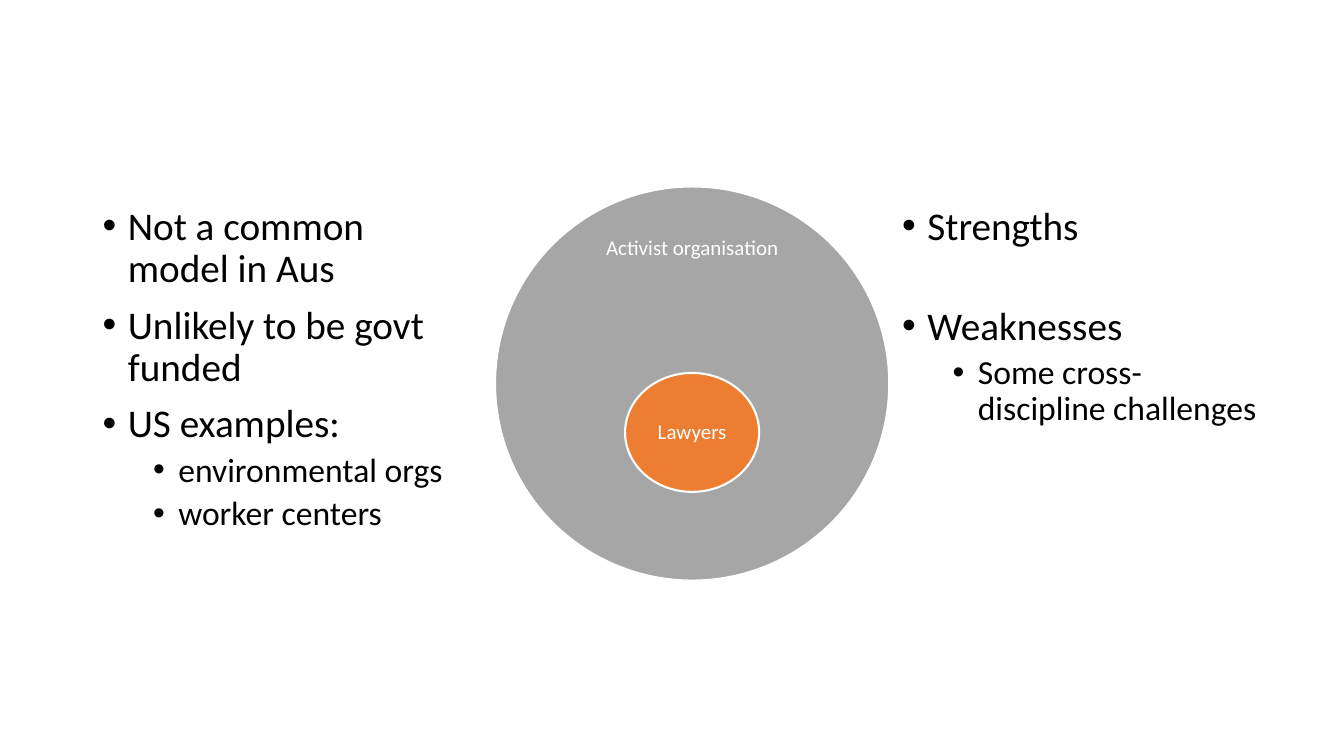
from lxml.etree import SubElement
from pptx import Presentation
from pptx.dml.color import RGBColor
from pptx.enum.shapes import MSO_SHAPE as SHAPE
from pptx.enum.text import MSO_ANCHOR as ANCHOR, PP_ALIGN as ALIGN
from pptx.oxml.ns import qn
from pptx.util import Inches, Pt

COLORS = {"text": "000000", "white": "FFFFFF", "activist": "A6A6A6", "lawyers": "ED7D31"}
FONT = "Calibri"
LEVELS = [
    {"size": 28, "margin": 0.25, "before": 10},
    {"size": 24, "margin": 0.75, "before": 5},
]
MODEL_POINTS = [
    (0, "Not a common model in Aus"),
    (0, "Unlikely to be govt funded"),
    (0, "US examples:"),
    (1, "environmental orgs"),
    (1, "worker centers"),
]
ASSESSMENT_POINTS = [
    (0, "Strengths"),
    (0, "Weaknesses", 41),
    (1, "Some cross-discipline challenges"),
]


def rgb(name):
    return RGBColor.from_string(COLORS[name])


def set_attrs(target, values):
    for name, value in values.items():
        setattr(target, name, value)


def add_run(p, text, size, color):
    r = p.add_run()
    r.text = text
    set_attrs(r.font, {"name": FONT, "size": Pt(size)})
    r.font.color.rgb = rgb(color)


def add_bullet(p, margin):
    pPr = p._p.get_or_add_pPr()
    pPr.set("marL", str(Inches(margin)))
    pPr.set("indent", str(Inches(-0.25)))
    SubElement(pPr, qn("a:buFont")).set("typeface", "Arial")
    SubElement(pPr, qn("a:buChar")).set("char", "•")


def add_bullet_list(slide, box, points):
    tf = slide.shapes.add_textbox(*map(Inches, box)).text_frame
    tf.word_wrap = True
    for i, (level, text, *gap) in enumerate(points):
        style = LEVELS[level]
        before = gap[0] if gap else style["before"]
        p = tf.paragraphs[0] if i == 0 else tf.add_paragraph()
        set_attrs(p, {"level": level, "line_spacing": 0.9, "space_before": Pt(before)})
        add_bullet(p, style["margin"])
        add_run(p, text, style["size"], "text")


def add_circle(shapes, box, color):
    sp = shapes.add_shape(SHAPE.OVAL, *map(Inches, box))
    sp.shadow.inherit = False
    sp.fill.solid()
    sp.fill.fore_color.rgb = rgb(color)
    sp.line.color.rgb = rgb("white")
    sp.line.width = Pt(1.5)


def add_label(shapes, box, text):
    tf = shapes.add_textbox(*map(Inches, box)).text_frame
    sides = ("left", "top", "right", "bottom")
    set_attrs(tf, {f"margin_{side}": Inches(0.12) for side in sides})
    set_attrs(tf, {"word_wrap": True, "vertical_anchor": ANCHOR.MIDDLE})
    p = tf.paragraphs[0]
    set_attrs(p, {"alignment": ALIGN.CENTER, "line_spacing": 0.9})
    add_run(p, text, 15, "white")


def add_nested_circles(slide, left, top, size):
    shapes = slide.shapes.add_group_shape().shapes
    center = left + size / 2

    def centered(offset, width, height):
        return center - width / 2, top + offset, width, height

    add_circle(shapes, (left, top, size, size), "activist")
    add_label(shapes, centered(0.29, 2.05, 0.66), "Activist organisation")
    add_circle(shapes, centered(1.85, 1.33, 1.18), "lawyers")
    add_label(shapes, centered(2.15, 0.94, 0.59), "Lawyers")


def main():
    prs = Presentation()
    set_attrs(prs, {"slide_width": Inches(13.33), "slide_height": Inches(7.5)})
    slide = prs.slides.add_slide(prs.slide_layouts[6])
    add_bullet_list(slide, (0.92, 2, 3.82, 4.76), MODEL_POINTS)
    add_nested_circles(slide, 4.91, 1.85, 3.91)
    add_bullet_list(slide, (8.85, 2, 3.82, 4.76), ASSESSMENT_POINTS)
    prs.save("out.pptx")


if __name__ == "__main__":
    main()
